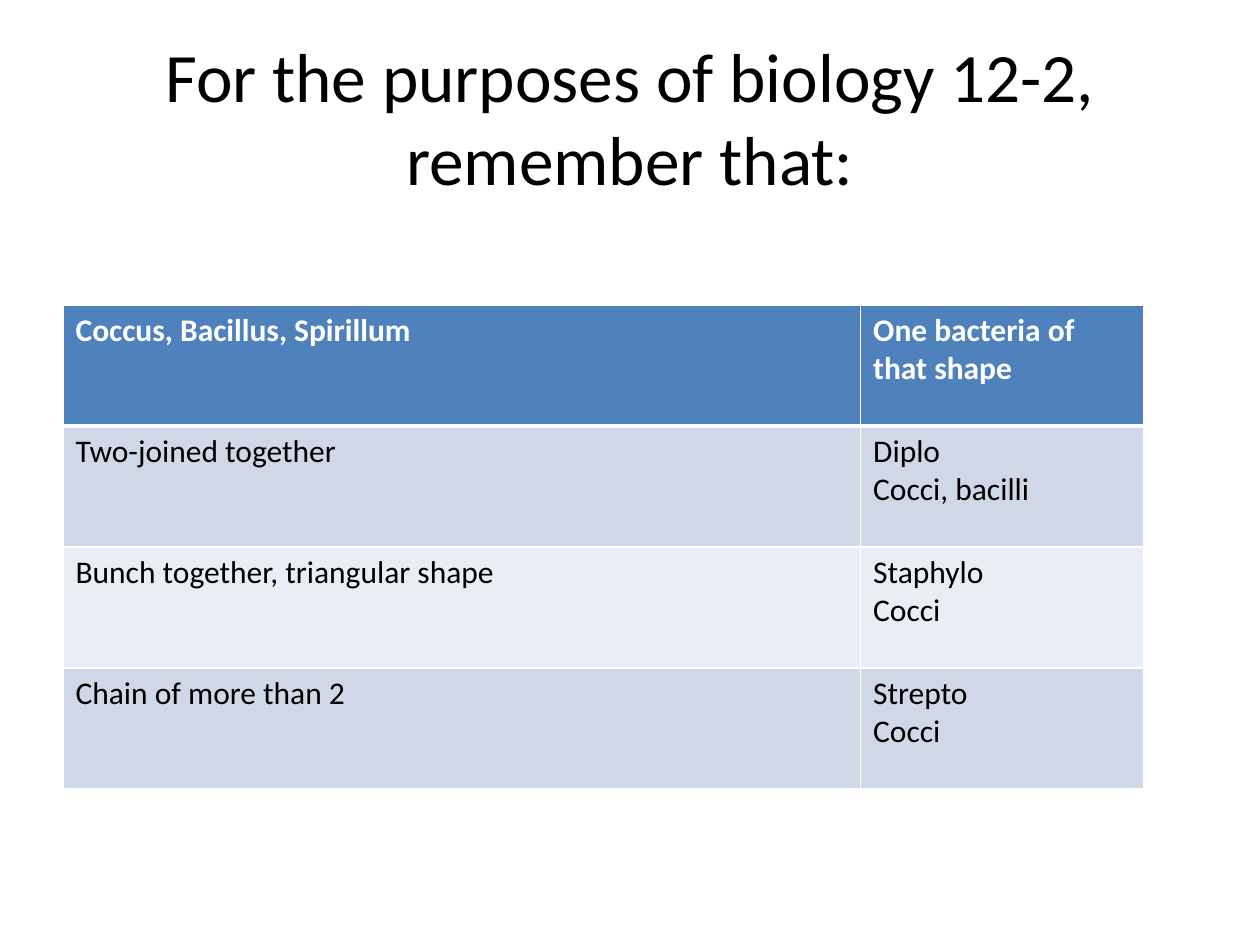
"""Build a slide with a table of bacteria shapes and their name prefixes."""
from dataclasses import dataclass

from lxml import etree
from pptx import Presentation
from pptx.dml.color import RGBColor
from pptx.enum.text import MSO_ANCHOR, MSO_AUTO_SIZE, PP_ALIGN
from pptx.oxml.ns import qn
from pptx.util import Cm, Pt

MIDDLE = MSO_ANCHOR.MIDDLE
NO_AUTOFIT = MSO_AUTO_SIZE.NONE
CENTER = PP_ALIGN.CENTER
FONT = "Calibri"
WHITE, BLACK = "FFFFFF", "000000"
COL_WIDTHS = (16.08, 5.71)
ROW_HEIGHT = 2.44


@dataclass
class Row:
    texts: tuple[str, str]
    fill: str
    color: str = BLACK
    bold: bool = False
    bottom: float = 1


ROWS = [
    Row(("Coccus, Bacillus, Spirillum", "One bacteria of that shape"), "4F81BD", WHITE, True, 3),
    Row(("Two-joined together", "Diplo\nCocci, bacilli"), "D0D8E8"),
    Row(("Bunch together, triangular shape", "Staphylo\nCocci"), "E9EDF4"),
    Row(("Chain of more than 2", "Strepto\nCocci"), "D0D8E8"),
]


def rgb(value: str) -> RGBColor:
    return RGBColor.from_string(value)


def format_text(tf, size: float, color: str, bold: bool = False) -> None:
    for p in tf.paragraphs:
        for r in p.runs:
            r.font.name = FONT
            r.font.size = Pt(size)
            r.font.bold = bold
            r.font.color.rgb = rgb(color)


def add_border(cell, side: str, width: float) -> None:
    tc_pr = cell._tc.get_or_add_tcPr()
    ln = etree.SubElement(tc_pr, qn(f"a:ln{side}"), w=str(Pt(width)))
    fill = etree.SubElement(ln, qn("a:solidFill"))
    etree.SubElement(fill, qn("a:srgbClr"), val=WHITE)


def fill_cell(cell, text: str, row: Row, top: float) -> None:
    cell.text_frame.text = text
    format_text(cell.text_frame, 18, row.color, row.bold)
    for side, width in (("L", 1), ("R", 1), ("T", top), ("B", row.bottom)):
        add_border(cell, side, width)
    cell.fill.solid()
    cell.fill.fore_color.rgb = rgb(row.fill)


def add_title(slide, text: str) -> None:
    sp = slide.shapes.title
    sp.left, sp.top, sp.width, sp.height = Cm(1.27), Cm(0.76), Cm(22.86), Cm(3.18)
    tf = sp.text_frame
    tf.text = text
    tf.word_wrap = True
    tf.auto_size = NO_AUTOFIT
    tf.vertical_anchor = MIDDLE
    tf.paragraphs[0].alignment = CENTER
    format_text(tf, 39.6, BLACK)


def add_shape_table(slide, rows: list[Row]) -> None:
    table = slide.shapes.add_table(
        len(rows), len(COL_WIDTHS), Cm(1.27), Cm(6.15),
        Cm(sum(COL_WIDTHS)), Cm(ROW_HEIGHT * len(rows)),
    ).table
    for col, width in zip(table.columns, COL_WIDTHS):
        col.width = Cm(width)
    top = 1
    for i, row in enumerate(rows):
        table.rows[i].height = Cm(ROW_HEIGHT)
        for j, text in enumerate(row.texts):
            fill_cell(table.cell(i, j), text, row, top)
        top = row.bottom


def main() -> None:
    prs = Presentation()
    prs.slide_width, prs.slide_height = Cm(25.4), Cm(19.05)
    slide = prs.slides.add_slide(prs.slide_layouts[5])
    add_title(slide, "For the purposes of biology 12-2, remember that:")
    add_shape_table(slide, ROWS)
    prs.save("out.pptx")


if __name__ == "__main__":
    main()
